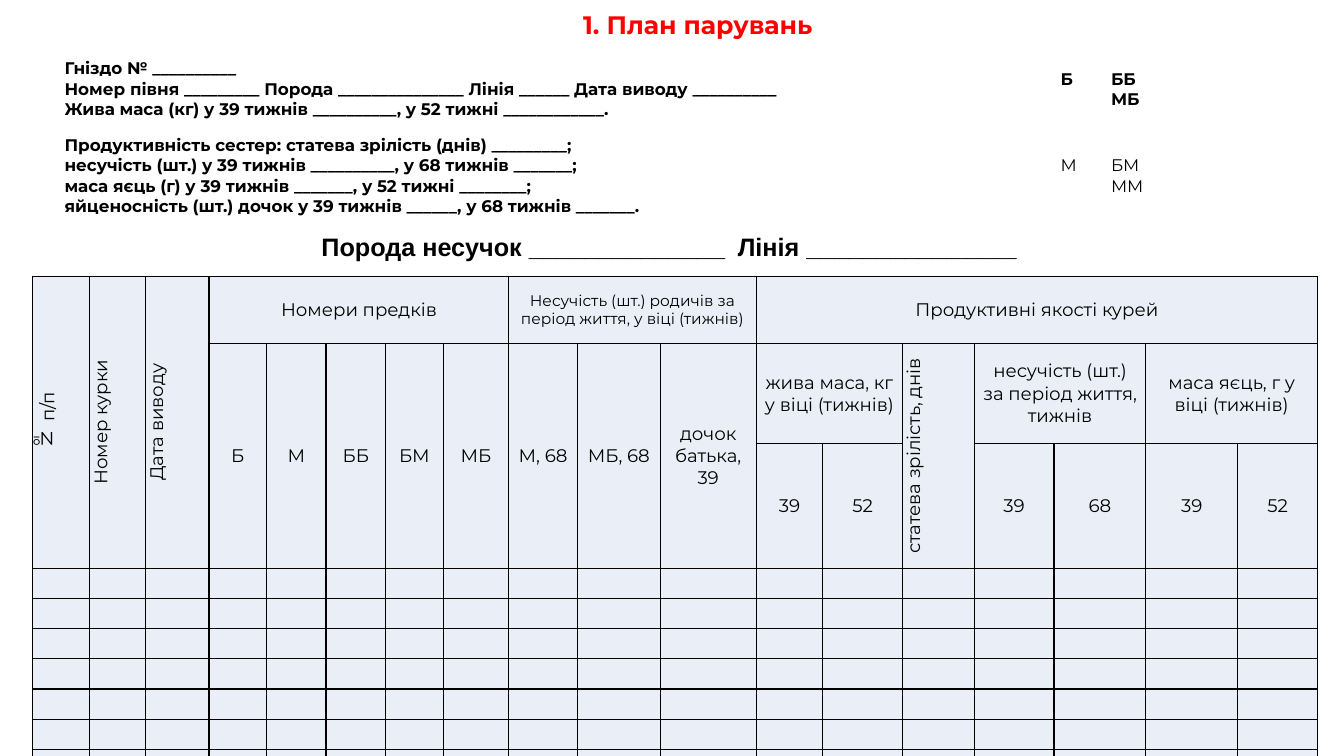
import pptx
import pptx.util
import pptx.dml.color
import pptx.enum.text
import pptx.oxml.ns
from lxml import etree

Inches, Pt = pptx.util.Inches, pptx.util.Pt
qn = pptx.oxml.ns.qn
ALIGN = pptx.enum.text.PP_ALIGN
MIDDLE = pptx.enum.text.MSO_ANCHOR.MIDDLE
HUES = {"ink": "000000", "title": "FF0000", "cell": "EAEFF7", "clear": "FFFFFF"}


class Sheet:
    """Holds the deck, the current slide and the style; lengths are percent of the slide."""

    def __init__(self, wide, high):
        self.deck = pptx.Presentation()
        self.deck.slide_width, self.deck.slide_height = Inches(wide), Inches(high)
        self.slide = self.deck.slides.add_slide(self.deck.slide_layouts[6])

    def frame(self, left, top, wide, high):
        across, down = self.deck.slide_width / 100, self.deck.slide_height / 100
        return [int(n) for n in (left * across, top * down, wide * across, high * down)]

    def letter(self, body, text, size, bold=False, hue="ink", font="Montserrat",
               align=ALIGN.CENTER, indent=0, tab=0):
        body.text = text
        body.word_wrap = True
        for para in body.paragraphs:
            para.alignment = align
            props = para._p.get_or_add_pPr()
            props.set("marL", "0")
            props.set("indent", str(Inches(indent)))
            if tab:
                stops = etree.SubElement(props, qn("a:tabLst"))
                etree.SubElement(stops, qn("a:tab"), pos=str(Inches(tab)), algn="l")
            for run in para.runs:
                run.font.size, run.font.bold, run.font.name = Pt(size), bold, font
                run.font.color.rgb = pptx.dml.color.RGBColor.from_string(HUES[hue])
            if not para.runs:
                para._p.get_or_add_endParaRPr().set("sz", str(size * 100))

    def label(self, place, text, size, anchor=None, **style):
        body = self.slide.shapes.add_textbox(*self.frame(*place)).text_frame
        self.letter(body, text, size, **style)
        body.auto_size = pptx.enum.text.MSO_AUTO_SIZE.SHAPE_TO_FIT_TEXT
        body.vertical_anchor = anchor

    def table(self, place, cols, rows, pad, line, fill=None):
        box = self.frame(*place)
        grid = self.slide.shapes.add_table(len(rows), len(cols), *box).table
        grid.first_row = grid.horz_banding = False
        for col, share in zip(grid.columns, cols):
            col.width = int(box[2] * share / sum(cols))
        for row, share in zip(grid.rows, rows):
            row.height = int(box[3] * share / sum(rows))
        for cell in grid.iter_cells():
            cell.margin_left = cell.margin_right = Inches(pad)
            cell.margin_top = cell.margin_bottom = 0
            cell.vertical_anchor = MIDDLE
            for side in ("a:lnL", "a:lnR", "a:lnT", "a:lnB"):
                edge = etree.SubElement(cell._tc.get_or_add_tcPr(), qn(side), w=str(Pt(1)))
                paint = etree.SubElement(edge, qn("a:solidFill"))
                etree.SubElement(paint, qn("a:srgbClr"), val=HUES[line])
            if fill:
                cell.fill.solid()
                cell.fill.fore_color.rgb = pptx.dml.color.RGBColor.from_string(HUES[fill])
            else:
                cell.fill.background()
            if not cell.text_frame.text:
                self.letter(cell.text_frame, "", 12)
        return grid

    def head(self, grid, row, col, down, over, text, size=13, turn=False):
        cell = grid.cell(row, col)
        if down * over > 1:
            cell.merge(grid.cell(row + down - 1, col + over - 1))
        self.letter(cell.text_frame, text, size)
        if turn:
            cell._tc.get_or_add_tcPr().set("vert", "vert270")


NEST = """Гніздо № __________
Номер півня _________ Порода _______________ Лінія ______ Дата виводу __________
Жива маса (кг) у 39 тижнів __________, у 52 тижні ____________."""
KIN = """Продуктивність сестер: статева зрілість (днів) _________;
несучість (шт.) у 39 тижнів __________, у 68 тижнів _______;
маса яєць (г) у 39 тижнів _______, у 52 тижні ________;
яйценосність (шт.) дочок у 39 тижнів ______, у 68 тижнів _______."""
FACTS = [
    (0, 0, NEST, True, 0),
    (0, 1, "Б\tББ\n\tМБ", True, 1.66),
    (1, 0, KIN, True, 0),
    (1, 1, "М\tБМ\n\tММ", False, 1.6),
]
GROUPS = [
    (0, 3, 1, 5, "Номери предків"),
    (0, 8, 1, 3, "Несучість (шт.) родичів за період життя, у віці (тижнів)", 11),
    (0, 11, 1, 7, "Продуктивні якості курей"),
    (1, 11, 1, 2, "жива маса, кг у віці (тижнів)"),
    (1, 13, 2, 1, "статева зрілість, днів", 13, True),
    (1, 14, 1, 2, "несучість (шт.) за період життя, тижнів"),
    (1, 16, 1, 2, "маса яєць, г у віці (тижнів)"),
]
TALL = ["№ п/п", "Номер курки", "Дата виводу"]
KINDS = ["Б", "М", "ББ", "БМ", "МБ", "М, 68", "МБ, 68", "дочок батька, 39"]
WEEKS = {11: "39", 12: "52", 14: "39", 15: "68", 16: "39", 17: "52"}
COLS = [57, 55, 63, 57, 59, 59, 57, 65, 68, 82, 95, 66, 79, 71, 79, 91, 91, 79]


def main():
    sheet = Sheet(13.33, 7.5)
    facts = sheet.table((0.75, 7.07, 98.27, 22.93), [988, 322], [71, 101], 0.04, "clear")
    for row, col, text, bold, tab in FACTS:
        sheet.letter(facts.cell(row, col).text_frame, text, 12, bold=bold,
                     align=ALIGN.LEFT, indent=0.5, tab=tab)
    sheet.label((2.78, 0.53, 94.52, 5.33), "1. План парувань", 18, MIDDLE,
                bold=True, hue="title", indent=0.5)

    plan = sheet.table((2.4, 36.53, 95.65, 58.53), COLS, [67, 99, 63] + [30] * 7,
                       0.07, "ink", "cell")
    for col, text in enumerate(TALL):
        sheet.head(plan, 0, col, 3, 1, text, turn=True)
    for group in GROUPS:
        sheet.head(plan, *group)
    for col, text in enumerate(KINDS, len(TALL)):
        sheet.head(plan, 1, col, 2, 1, text)
    for col, text in WEEKS.items():
        sheet.head(plan, 2, col, 1, 1, text)

    sheet.label((12.9, 30, 71.87, 5.33), "Порода несучок ______________\tЛінія _______________",
                18, bold=True, font="Arial", align=ALIGN.LEFT, indent=1.37, tab=5.72)
    sheet.deck.save("out.pptx")


if __name__ == "__main__":
    main()
